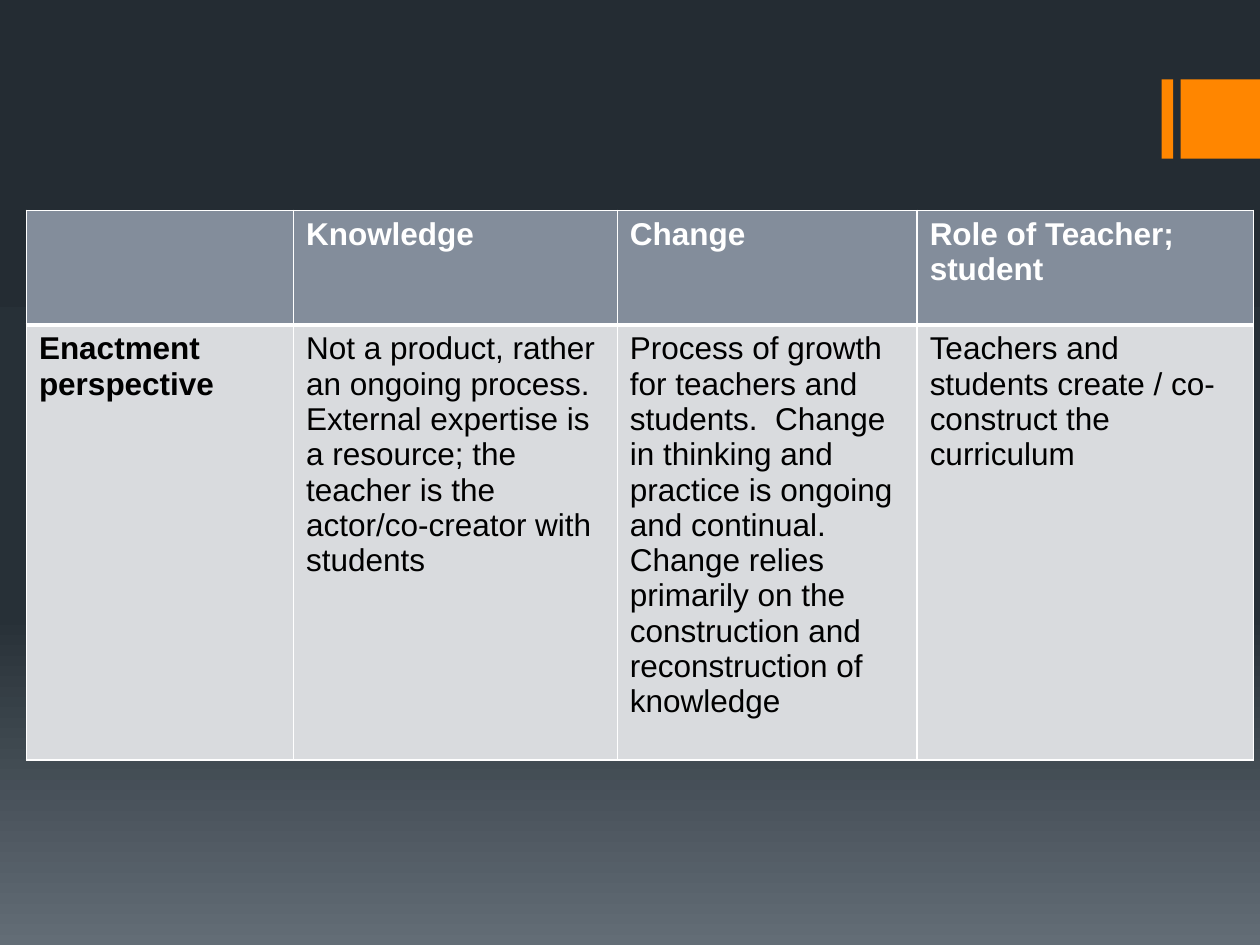
import copy

import pptx
import pptx.dml.color
import pptx.enum.shapes
import pptx.oxml.ns
import pptx.oxml.xmlchemy
import pptx.util
from lxml import etree

Inches = pptx.util.Inches
qn = pptx.oxml.ns.qn

COLORS = {
    "night": "242C33",
    "dusk": "273037",
    "haze": "636D76",
    "accent": "FF8600",
    "header": "838D9B",
    "body": "D9DBDE",
    "white": "FFFFFF",
    "black": "000000",
}


def rgb(name):
    return pptx.dml.color.RGBColor.from_string(COLORS[name])


def write(frame, text, *, color, bold=False, size=18, font="Arial"):
    run = frame.paragraphs[0].add_run()
    run.text = text
    run.font.name = font
    run.font.size = pptx.util.Pt(size)
    run.font.bold = bold
    run.font.color.rgb = rgb(color)


presentation = pptx.Presentation()
presentation.slide_width = Inches(10)
presentation.slide_height = Inches(7.5)
slide = presentation.slides.add_slide(presentation.slide_layouts[6])

# Background: dark sky that lightens towards the bottom
sky = slide.background.fill
sky.gradient()
sky.gradient_angle = 270
stop_list = slide.element.find(".//" + qn("a:gsLst"))
stop_list.append(copy.deepcopy(stop_list[-1]))
sky_stops = [(0, "night"), (0.65, "dusk"), (1, "haze")]
for stop, (position, color) in zip(sky.gradient_stops, sky_stops):
    stop.position = position
    stop.color.rgb = rgb(color)

# Accent bars at the right edge
for left, width in [(9.22, 0.09), (9.37, 0.63)]:
    accent = slide.shapes.add_shape(
        pptx.enum.shapes.MSO_SHAPE.RECTANGLE,
        Inches(left), Inches(0.63), Inches(width), Inches(0.63),
    )
    accent.shadow.inherit = False
    accent.fill.solid()
    accent.fill.fore_color.rgb = rgb("accent")
    accent.line.fill.background()

# Perspective table
perspectives = [
    ["", "Knowledge", "Change", "Role of Teacher; student"],
    [
        "Enactment perspective",
        "Not a product, rather an ongoing process.  External expertise is "
        "a resource; the teacher is the actor/co-creator with students",
        "Process of growth for teachers and students.  Change in thinking and "
        "practice is ongoing and continual. Change relies primarily on the "
        "construction and reconstruction of knowledge",
        "Teachers and students create / co-construct the curriculum",
    ],
]
column_widths = [2.12, 2.57, 2.38, 2.67]
row_heights = [0.91, 3.45]
table = slide.shapes.add_table(
    len(row_heights), len(column_widths), Inches(0.21), Inches(1.67),
    Inches(sum(column_widths)), Inches(sum(row_heights)),
).table
for column, width in zip(table.columns, column_widths):
    column.width = Inches(width)
for row, height in zip(table.rows, row_heights):
    row.height = Inches(height)

for r, texts in enumerate(perspectives):
    is_header = r == 0
    header_rule = "lnB" if is_header else "lnT"
    for c, text in enumerate(texts):
        cell = table.cell(r, c)
        properties = cell._tc.get_or_add_tcPr()
        for side in ("lnL", "lnR", "lnT", "lnB"):
            weight = 3 if side == header_rule else 1
            border = etree.SubElement(
                properties, qn("a:" + side), w=str(pptx.util.Pt(weight)))
            paint = etree.SubElement(border, qn("a:solidFill"))
            etree.SubElement(paint, qn("a:srgbClr"), val=COLORS["white"])
        cell.fill.solid()
        cell.fill.fore_color.rgb = rgb("header" if is_header else "body")
        if text:
            write(cell.text_frame, text, bold=is_header or c == 0,
                  color="white" if is_header else "black")

presentation.save("out.pptx")
